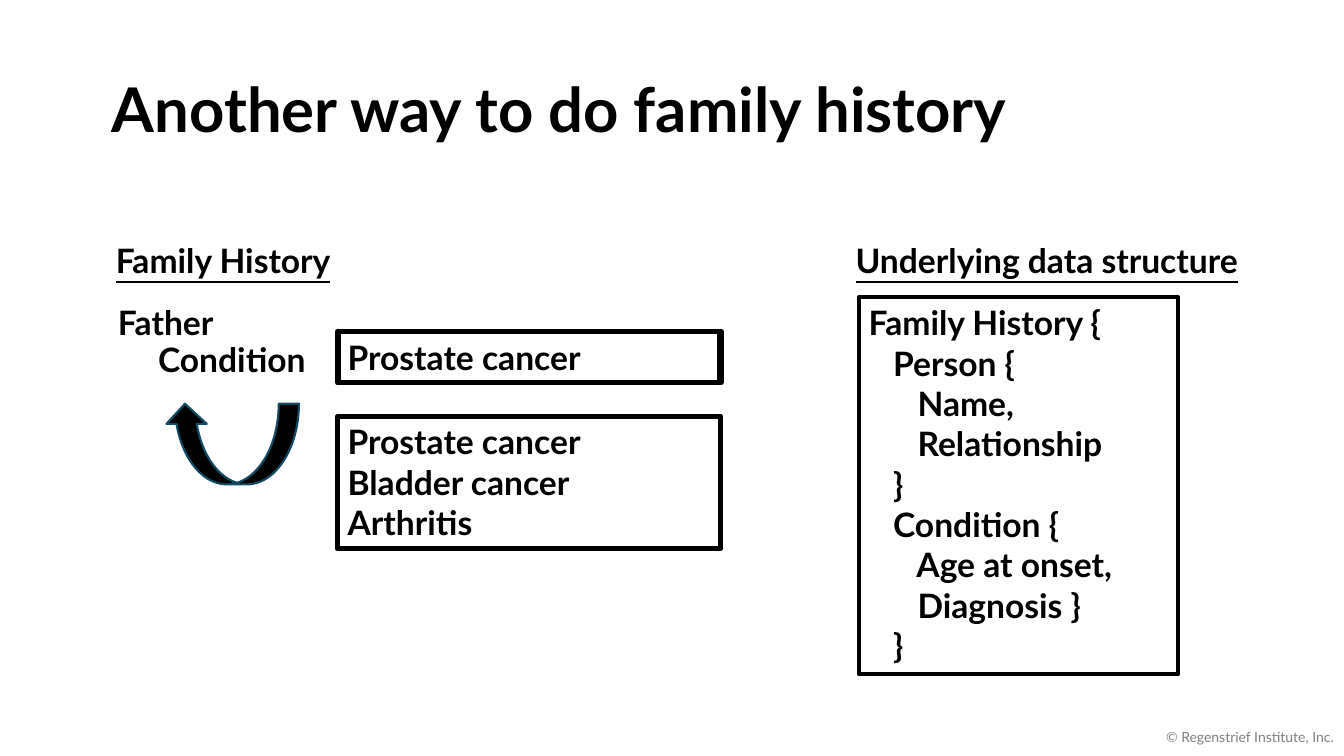
"""Build the slide on another way to record family history."""
from pptx import Presentation
from pptx.dml.color import RGBColor
from pptx.enum.shapes import MSO_SHAPE
from pptx.enum.text import MSO_ANCHOR, MSO_AUTO_SIZE, PP_ALIGN
from pptx.util import Pt

RECTANGLE = MSO_SHAPE.RECTANGLE
CURVED_ARROW = MSO_SHAPE.CURVED_LEFT_ARROW
TOP, MIDDLE = MSO_ANCHOR.TOP, MSO_ANCHOR.MIDDLE
LEFT, RIGHT = PP_ALIGN.LEFT, PP_ALIGN.RIGHT
GROW, FIXED = MSO_AUTO_SIZE.SHAPE_TO_FIT_TEXT, MSO_AUTO_SIZE.NONE

FONT = "Lato"
COLORS = {"ink": "000000", "arrow_edge": "124A63", "copyright": "808080"}
TITLE = "Another way to do family history"
TITLE_AREA = (72.7, 28.1, 828, 104.4)
COPYRIGHT = "© Regenstrief Institute, Inc."
COPYRIGHT_AREA = (743.8, 511.9, 216, 28.8)
ARROW_AREA = (136.8, 269.3, 57.6, 95.8)

LABELS = [
    ("Family History", (75.6, 167.8, 172.1, 36.35), True),
    ("Father", (77.2, 212.4, 120, 36.35), False),
    ("Condition", (105.8, 238.3, 121, 36.35), False),
    ("Underlying data structure", (604.1, 167.8, 290.9, 36.35), True),
]
DATA_STRUCTURE = [
    "Family History {",
    "   Person {",
    "      Name,",
    "      Relationship",
    "   }",
    "   Condition {",
    "      Age at onset,",
    "      Diagnosis }",
    "   }",
]
BOXES = [
    (["Prostate cancer", "Bladder cancer", "Arthritis"], (241.2, 297.4, 273.6, 94.5), 4),
    (["Prostate cancer"], (241.2, 236.9, 273, 36.35), 4),
    ([], (241.9, 236.9, 273, 36.35), 4),
    (DATA_STRUCTURE, (613.4, 212.4, 228.2, 269.3), 3),
]


def color(name):
    return RGBColor.from_string(COLORS[name])


def lengths(area):
    return [Pt(value) for value in area]


def write(shape, lines, size=24, bold=True, underline=None, ink="ink",
          align=LEFT, anchor=TOP, wrap=True, fit=FIXED):
    frame = shape.text_frame
    frame.word_wrap = wrap
    frame.auto_size = fit
    frame.vertical_anchor = anchor
    for index, line in enumerate(lines):
        paragraph = frame.add_paragraph() if index else frame.paragraphs[0]
        paragraph.alignment = align
        run = paragraph.add_run()
        run.text = line
        font = run.font
        font.name, font.size = FONT, Pt(size)
        font.bold, font.underline = bold, underline
        font.color.rgb = color(ink)


def add_outline(slide, preset, area, edge, width):
    shape = slide.shapes.add_shape(preset, *lengths(area))
    shape.shadow.inherit = False
    shape.fill.background()
    shape.line.color.rgb = color(edge)
    shape.line.width = Pt(width)
    return shape


def main():
    presentation = Presentation()
    presentation.slide_width, presentation.slide_height = Pt(960), Pt(540)
    slide = presentation.slides.add_slide(presentation.slide_layouts[5])

    title = slide.shapes.title
    title.left, title.top, title.width, title.height = lengths(TITLE_AREA)
    write(title, [TITLE], size=44, anchor=MIDDLE)
    title.text_frame.paragraphs[0].line_spacing = 0.9

    for text, area, underline in LABELS:
        label = slide.shapes.add_textbox(*lengths(area))
        write(label, [text], underline=underline, wrap=False, fit=GROW)

    for lines, area, width in BOXES:
        write(add_outline(slide, RECTANGLE, area, "ink", width), lines)

    arrow = add_outline(slide, CURVED_ARROW, ARROW_AREA, "arrow_edge", 1.5)
    arrow.fill.solid()
    arrow.fill.fore_color.rgb = color("ink")
    arrow.rotation = 90

    copyright_box = slide.shapes.add_textbox(*lengths(COPYRIGHT_AREA))
    write(copyright_box, [COPYRIGHT], size=10, bold=False, ink="copyright",
          align=RIGHT, anchor=MIDDLE)

    presentation.save("out.pptx")


if __name__ == "__main__":
    main()
